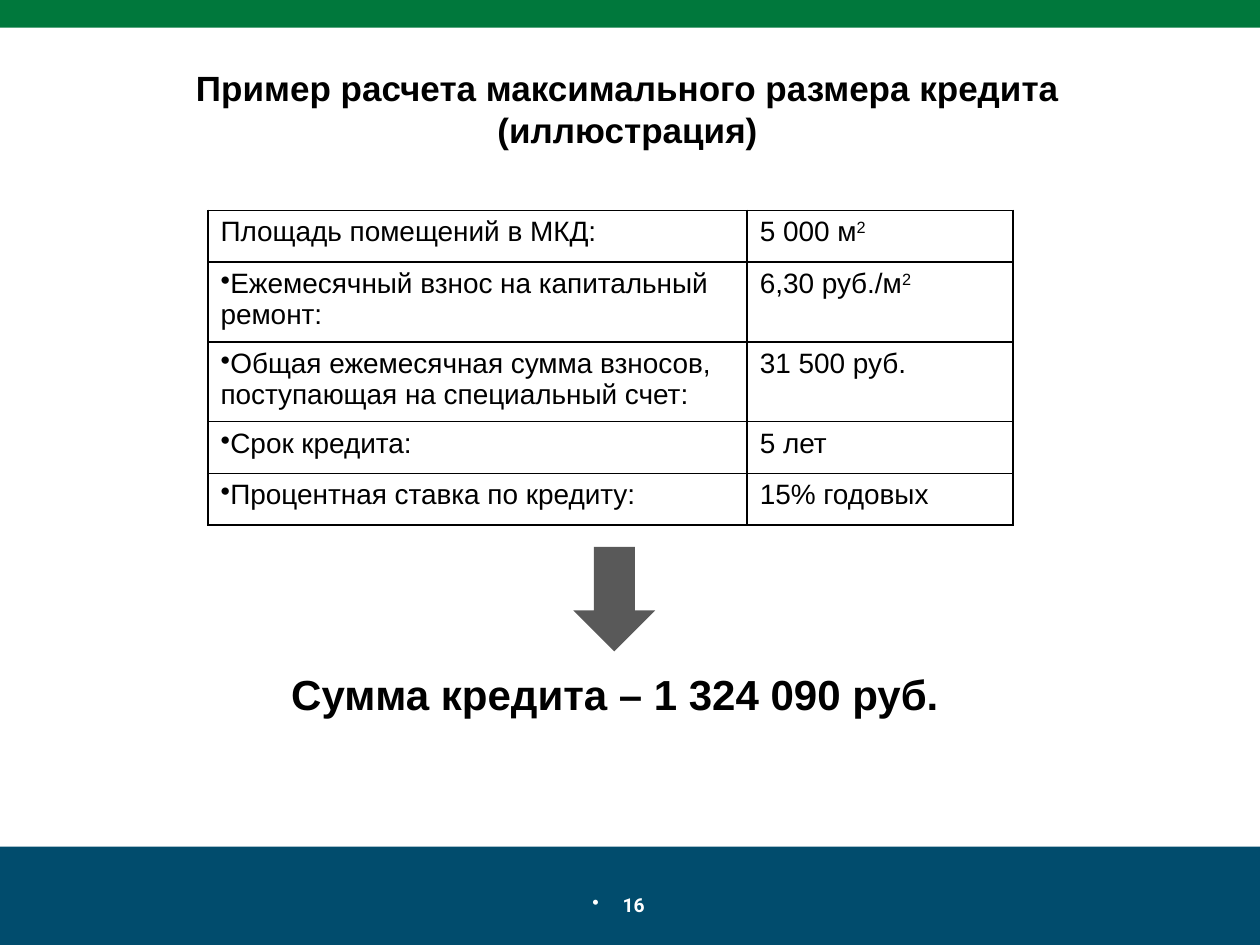
from pptx import Presentation
from pptx.dml.color import RGBColor as Rgb
from pptx.enum.shapes import MSO_SHAPE as Kind
from pptx.enum.text import PP_ALIGN as Align
from pptx.oxml.ns import qn
from pptx.util import Inches, Pt
from lxml.etree import SubElement as Sub

HUES = {"green": "00783C", "navy": "014C6D", "gray": "595959",
        "black": "000000", "white": "FFFFFF"}
TITLE = {"name": "Arial", "size": Pt(20), "bold": True}
TOTAL = {"name": "Arial", "size": Pt(24), "bold": True}
PAGE = {"name": "Roboto", "size": Pt(11), "bold": True}
BODY = {"name": "Arial", "size": Pt(16), "bold": False}
ROWS = [
    ("Площадь помещений в МКД:", "5 000 м", "2", 0.41),
    ("Ежемесячный взнос на капитальный ремонт:", "6,30 руб./м", "2", 0.63),
    ("Общая ежемесячная сумма взносов, поступающая на специальный счет:",
     "31 500 руб.", "", 0.63),
    ("Срок кредита:", "5 лет", "", 0.41),
    ("Процентная ставка по кредиту:", "15% годовых", "", 0.41),
]
COLS = [4.28, 2.11]


def color(name):
    return Rgb.from_string(HUES[name])


def add_run(para, text, style, hue="black"):
    run = para.add_run()
    run.text = text
    for key, value in style.items():
        setattr(run.font, key, value)
    run.font.color.rgb = color(hue)
    return run


def add_bullet(para, indent=0):
    props = para._p.get_or_add_pPr()
    props.set("marL", str(Inches(indent)))
    props.set("indent", str(-Inches(indent)))
    Sub(props, qn("a:buChar"), char="•")


def add_block(slide, kind, box, hue, turn=0):
    shape = slide.shapes.add_shape(kind, *map(Inches, box))
    shape.shadow.inherit = False
    shape.fill.solid()
    shape.fill.fore_color.rgb = color(hue)
    shape.line.fill.background()
    shape.rotation = turn


def add_label(slide, box, text, style, hue="black"):
    frame = slide.shapes.add_textbox(*map(Inches, box)).text_frame
    frame.word_wrap = True
    para = frame.paragraphs[0]
    para.alignment = Align.CENTER
    add_run(para, text, style, hue)
    return frame


def add_edges(cell):
    props = cell._tc.get_or_add_tcPr()
    for side in "LRTB":
        edge = Sub(props, qn("a:ln" + side), w=str(Pt(1)))
        fill = Sub(edge, qn("a:solidFill"))
        Sub(fill, qn("a:srgbClr"), val=HUES["black"])


def fill_cell(cell, text, power="", bullet=False):
    add_edges(cell)
    cell.fill.background()
    para = cell.text_frame.paragraphs[0]
    if bullet:
        add_bullet(para)
    add_run(para, text, BODY)
    if power:
        run = add_run(para, power, BODY)
        run._r.get_or_add_rPr().set("baseline", "30000")


def add_terms(slide):
    box = 1.65, 1.67, sum(COLS), sum(row[-1] for row in ROWS)
    grid = slide.shapes.add_table(len(ROWS), len(COLS), *map(Inches, box)).table
    grid.first_row = grid.horz_banding = False
    for col, width in zip(grid.columns, COLS):
        col.width = Inches(width)
    for i, (term, value, power, height) in enumerate(ROWS):
        grid.rows[i].height = Inches(height)
        fill_cell(grid.cell(i, 0), term, bullet=i > 0)
        fill_cell(grid.cell(i, 1), value, power)


def add_page(slide):
    frame = add_label(slide, (3.97, 7.04, 2.06, 0.31), "16", PAGE, "white")
    frame.margin_left, frame.margin_right = 0, Inches(0.18)
    add_bullet(frame.paragraphs[0], 0.24)


def main():
    deck = Presentation()
    deck.slide_width, deck.slide_height = Inches(10), Inches(7.5)
    slide = deck.slides.add_slide(deck.slide_layouts[6])
    add_block(slide, Kind.RECTANGLE, (0, 6.72, 10, 0.78), "navy")
    add_block(slide, Kind.RECTANGLE, (0, 0, 10, 0.22), "green")
    add_page(slide)
    add_label(slide, (0.47, 0.48, 9.02, 0.77),
              "Пример расчета максимального размера кредита (иллюстрация)", TITLE)
    add_block(slide, Kind.RIGHT_ARROW, (4.46, 4.43, 0.83, 0.65), "gray", 90)
    add_label(slide, (2.09, 5.26, 5.58, 0.5),
              "Сумма кредита – 1 324 090 руб.", TOTAL)
    add_terms(slide)
    deck.save("out.pptx")


if __name__ == "__main__":
    main()
